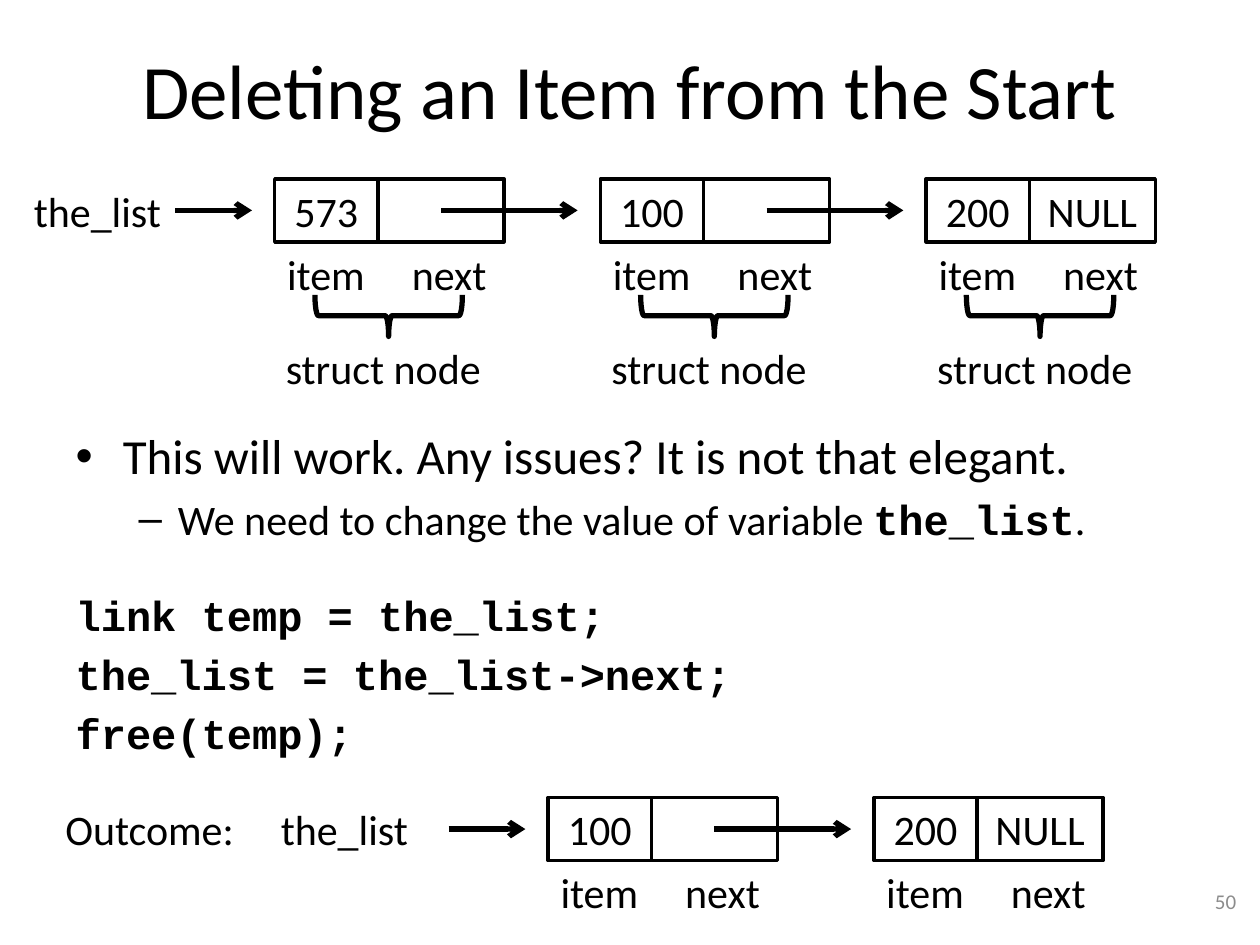
"""Build a slide on deleting the first item of a linked list."""
from lxml.etree import SubElement
from pptx import Presentation
from pptx.dml.color import RGBColor
from pptx.enum.shapes import MSO_CONNECTOR, MSO_SHAPE
from pptx.enum.text import MSO_ANCHOR, MSO_AUTO_SIZE, PP_ALIGN
from pptx.oxml.ns import qn
from pptx.util import Inches, Pt

BLACK = RGBColor(0x00, 0x00, 0x00)
GRAY = RGBColor(0x8C, 0x8C, 0x8C)
SANS, MONO = "Calibri", "Courier New"

TITLE = "Deleting an Item from the Start"
BULLETS = [
    (0, 28, [("This will work. Any issues? It is not that elegant.", SANS)]),
    (1, 24, [("We need to change the value of variable ", SANS),
             ("the_list", MONO), (".", SANS)]),
]
CODE = ["link temp = the_list;", "the_list = the_list->next;", "free(temp);"]
PAGE_NUMBER = "50"
LISTS = [
    {"left": 2.18, "top": 1.42, "items": ["573", "100", "200"], "braces": True,
     "labels": [("the_list", 0.17, 1.22)]},
    {"left": 4.35, "top": 6.33, "items": ["100", "200"], "braces": False,
     "labels": [("Outcome:", 0.42, 1.54), ("the_list", 2.13, 1.22)]},
]
NODE_PITCH = 2.585
ITEM_WIDTH, NEXT_WIDTH, BOX_HEIGHT = 0.82, 1, 0.5


def add_run(paragraph, text, size, font=SANS, color=BLACK):
    run = paragraph.add_run()
    run.text = text
    run.font.name = font
    run.font.size = Pt(size)
    run.font.bold = font == MONO
    run.font.color.rgb = color


def add_label(slide, text, left, top, width, height=BOX_HEIGHT, size=24,
              color=BLACK, align=PP_ALIGN.LEFT):
    box = slide.shapes.add_textbox(Inches(left), Inches(top), Inches(width), Inches(height))
    frame = box.text_frame
    frame.word_wrap = False
    frame.vertical_anchor = MSO_ANCHOR.MIDDLE
    frame.paragraphs[0].alignment = align
    add_run(frame.paragraphs[0], text, size, color=color)


def add_outline(slide, kind, left, top, width, height, weight):
    shape = slide.shapes.add_shape(kind, Inches(left), Inches(top), Inches(width), Inches(height))
    shape.shadow.inherit = False
    shape.fill.background()
    shape.line.color.rgb = BLACK
    shape.line.width = Pt(weight)
    return shape


def add_box(slide, text, left, top, width):
    box = add_outline(slide, MSO_SHAPE.RECTANGLE, left, top, width, BOX_HEIGHT, 2)
    if text:
        paragraph = box.text_frame.paragraphs[0]
        paragraph.alignment = PP_ALIGN.CENTER
        add_run(paragraph, text, 24)


def add_arrow(slide, start, end, y):
    arrow = slide.shapes.add_connector(
        MSO_CONNECTOR.STRAIGHT, Inches(start), Inches(y), Inches(end), Inches(y))
    arrow.line.color.rgb = BLACK
    arrow.line.width = Pt(3)
    SubElement(arrow.line._get_or_add_ln(), qn("a:tailEnd"), type="arrow")
    SubElement(arrow._element.spPr, qn("a:effectLst"))


def add_node(slide, item, left, top, is_last, brace):
    next_left = left + ITEM_WIDTH
    add_box(slide, item, left, top, ITEM_WIDTH)
    add_box(slide, "NULL" if is_last else "", next_left, top, NEXT_WIDTH)
    add_label(slide, "item", left, top + BOX_HEIGHT, 0.82)
    add_label(slide, "next", next_left + 0.17, top + BOX_HEIGHT, 0.8)
    if not is_last:
        add_arrow(slide, next_left + NEXT_WIDTH / 2, left + NODE_PITCH - 0.18, top + 0.25)
    if brace:
        shape = add_outline(slide, MSO_SHAPE.LEFT_BRACE, left + 0.74, top + 0.5, 0.33, 1.17, 3)
        shape.rotation = 270
        add_label(slide, "struct node", left - 0.01, top + 1.25, 1.77)


def add_linked_list(slide, left, top, items, braces, labels):
    for text, label_left, width in labels:
        add_label(slide, text, label_left, top, width)
    add_arrow(slide, left - 0.79, left - 0.18, top + 0.25)
    for index, item in enumerate(items):
        add_node(slide, item, left + index * NODE_PITCH, top, index == len(items) - 1, braces)


def place(shape, left, top, width, height):
    shape.left, shape.top = Inches(left), Inches(top)
    shape.width, shape.height = Inches(width), Inches(height)


def fill_body(frame):
    frame.auto_size = MSO_AUTO_SIZE.NONE
    paragraphs = [frame.paragraphs[0]]
    paragraphs += [frame.add_paragraph() for _ in BULLETS[1:] + CODE]
    for paragraph, (level, size, runs) in zip(paragraphs, BULLETS):
        paragraph.level = level
        for text, font in runs:
            add_run(paragraph, text, size, font)
    code_paragraphs = paragraphs[len(BULLETS):]
    for paragraph, text in zip(code_paragraphs, CODE):
        properties = paragraph._p.get_or_add_pPr()
        properties.set("marL", "0")
        properties.set("indent", "0")
        SubElement(properties, qn("a:buNone"))
        add_run(paragraph, text, 24, MONO)
    code_paragraphs[0].space_before = Pt(26.5)


def main():
    presentation = Presentation()
    presentation.slide_width, presentation.slide_height = Inches(10), Inches(7.5)
    slide = presentation.slides.add_slide(presentation.slide_layouts[1])
    title, body = slide.placeholders
    place(title, 0.5, 0.08, 9, 1.25)
    add_run(title.text_frame.paragraphs[0], TITLE, 44)
    place(body, 0.5, 3.33, 9, 3.5)
    fill_body(body.text_frame)
    add_label(slide, PAGE_NUMBER, 7.58, 6.95, 2.33, 0.4, 12, GRAY, PP_ALIGN.RIGHT)
    for linked_list in LISTS:
        add_linked_list(slide, **linked_list)
    presentation.save("out.pptx")


if __name__ == "__main__":
    main()
